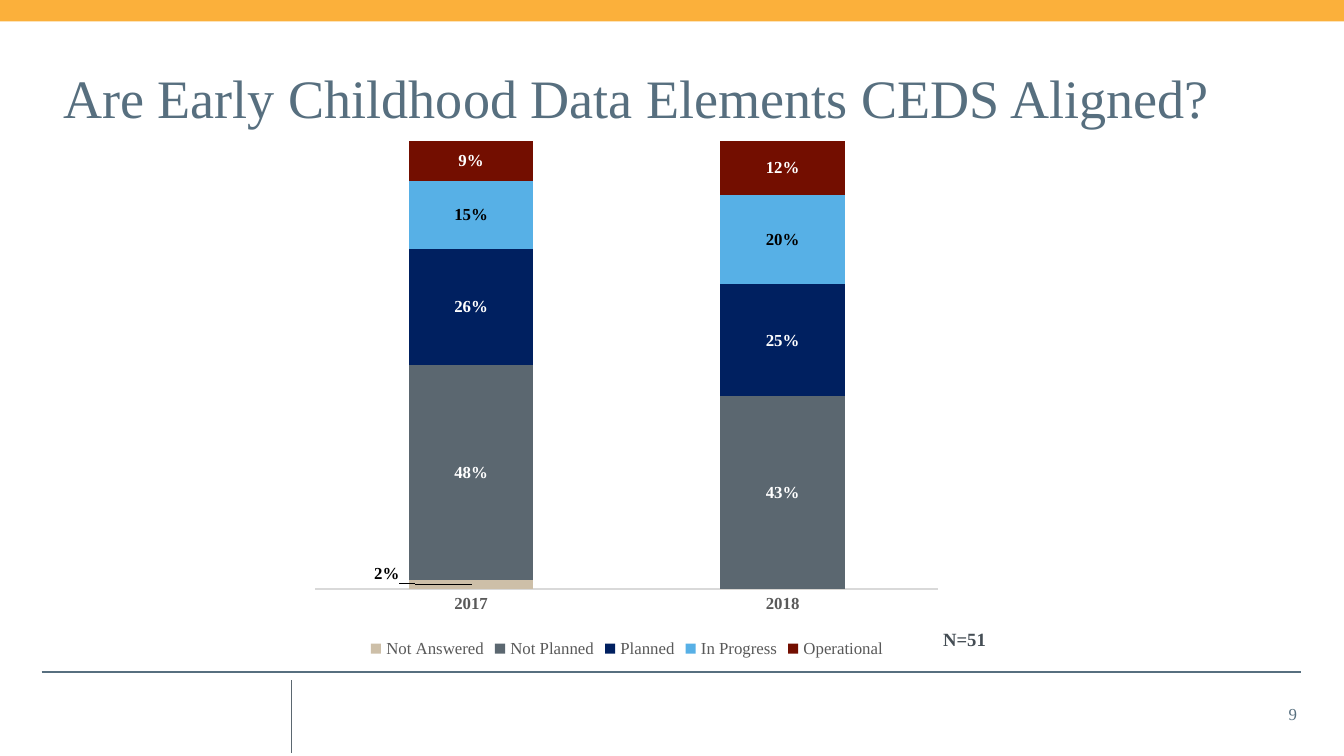
"""Build the slide on early childhood data elements and CEDS alignment."""
from lxml import etree
from pptx import Presentation
from pptx import util as u
from pptx.chart import data as cd
from pptx.dml import color as dml
from pptx.enum import chart as ch, shapes, text
from pptx.oxml import ns, parse_xml

FONT = "Times New Roman"
SLATE, GREY, AMBER = "576F7F", "5B6770", "FBB03B"
PERCENT = '0"%";;'
YEARS = ["2017", "2018"]
SERIES = [
    ("Not Answered", (2, 0), "CDBFA8", "000000"),
    ("Not Planned", (48, 43), GREY, "FFFFFF"),
    ("Planned", (26, 25), "002060", "FFFFFF"),
    ("In Progress", (15, 20), "57B0E6", "000000"),
    ("Operational", (9, 12), "730E00", "FFFFFF"),
]
RULES = [
    (0.31, 5, 9.68, 5, SLATE, 0.75),
    (2.17, 5.06, 2.17, 5.6, GREY, 0.5),
]
TEXTS = [
    ("Are Early Childhood Data Elements CEDS Aligned?", (0.47, 0.47, 9.06, 0.5),
     dict(size=29, color=SLATE, inset=(0, 0), anchor=text.MSO_ANCHOR.MIDDLE)),
    ("9", (9.3, 5.16, 0.39, 0.3),
     dict(size=9, color=SLATE, inset=(0.04, 0.02), anchor=text.MSO_ANCHOR.MIDDLE,
          align=text.PP_ALIGN.RIGHT)),
    ("N=51", (6.92, 4.62, 0.7, 0.27), dict(size=10, color="444D54", bold=True)),
]
NO_LEADERS = (
    f'<c:extLst {ns.nsdecls("c")}>'
    '<c:ext uri="{CE6537A1-D6FC-4f65-9D91-7224C49458BB}" '
    'xmlns:c15="http://schemas.microsoft.com/office/drawing/2012/chart">'
    '<c15:showLeaderLines val="0"/></c:ext></c:extLst>')


def rgb(value):
    return dml.RGBColor.from_string(value)


def style(font, size, color, bold=False):
    font.name, font.size, font.bold = FONT, u.Pt(size), bold
    font.color.rgb = rgb(color)


def add_text(s, words, box, *, size, color, bold=False, inset=(0.1, 0.05),
             anchor=text.MSO_ANCHOR.TOP, align=text.PP_ALIGN.LEFT):
    tf = s.shapes.add_textbox(*map(u.Inches, box)).text_frame
    tf.word_wrap = True
    tf.vertical_anchor = anchor
    tf.margin_left = tf.margin_right = u.Inches(inset[0])
    tf.margin_top = tf.margin_bottom = u.Inches(inset[1])
    p = tf.paragraphs[0]
    p.alignment = align
    r = p.add_run()
    r.text = words
    style(r.font, size, color, bold)


def add_rule(s, x1, y1, x2, y2, color, width):
    line = s.shapes.add_connector(shapes.MSO_CONNECTOR.STRAIGHT,
                                  *map(u.Inches, (x1, y1, x2, y2)))
    line.line.color.rgb = rgb(color)
    line.line.width = u.Pt(width)
    etree.SubElement(line._element.spPr, ns.qn("a:effectLst"))


def layout(**parts):
    tags = "".join(f'<c:{k} val="{v}"/>' for k, v in parts.items())
    return parse_xml(f'<c:layout {ns.nsdecls("c")}><c:manualLayout>{tags}'
                     '</c:manualLayout></c:layout>')


def label_series(series, color):
    labels = series.data_labels
    labels.show_value = True
    labels.number_format, labels.number_format_is_linked = PERCENT, False
    labels.position = ch.XL_LABEL_POSITION.CENTER
    style(labels.font, 9, color, True)


def move_label(series, index, dx, dy, color):
    label = series.points[index].data_label
    style(label.font, 9, color, True)
    label.position = ch.XL_LABEL_POSITION.CENTER
    node = series._element.find(".//" + ns.qn("c:dLbl"))
    fmt = etree.Element(ns.qn("c:numFmt"), formatCode=PERCENT, sourceLinked="0")
    node.insert(1, layout(x=dx, y=dy))
    node.insert(2, fmt)
    node.getparent().append(parse_xml(NO_LEADERS))


def add_stacked_chart(s, box):
    data = cd.CategoryChartData(number_format="0")
    data.categories = YEARS
    for name, values, _, _ in SERIES:
        data.add_series(name, values)
    chart = s.shapes.add_chart(ch.XL_CHART_TYPE.COLUMN_STACKED,
                               *map(u.Inches, box), data).chart
    chart.has_title = False
    chart.font.name, chart.font.size = FONT, u.Pt(10)
    chart.has_legend = True
    chart.legend.position = ch.XL_LEGEND_POSITION.BOTTOM
    chart.legend.include_in_layout = False
    style(chart.legend.font, 9, "595959")

    years, values = chart.category_axis, chart.value_axis
    years.major_tick_mark = ch.XL_TICK_MARK.NONE
    years.format.line.color.rgb = rgb("D9D9D9")
    years.format.line.width = u.Pt(0.75)
    style(years.tick_labels.font, 9, "595959", True)
    values.minimum_scale, values.maximum_scale = 0, 100
    values.has_major_gridlines = values.visible = False

    plot = chart.plots[0]
    plot.gap_width, plot.overlap, plot.vary_by_categories = 150, 100, False
    for series, (_, _, fill, label_color) in zip(plot.series, SERIES):
        series.format.fill.solid()
        series.format.fill.fore_color.rgb = rgb(fill)
        label_series(series, label_color)
    move_label(plot.series[0], 0, -0.13, -0.02, "000000")

    area = chart._chartSpace.find(".//" + ns.qn("c:plotArea"))
    for old in area.findall(ns.qn("c:layout")):
        area.remove(old)
    area.insert(0, layout(layoutTarget="inner", xMode="edge", yMode="edge",
                          x=0.02, y=0.02, w=0.96, h=0.84))


def main():
    prs = Presentation()
    prs.slide_width = u.Inches(10)
    prs.slide_height = prs.slide_width * 9 // 16
    s = prs.slides.add_slide(prs.slide_layouts[6])
    for rule in RULES:
        add_rule(s, *rule)
    band = s.shapes.add_shape(shapes.MSO_SHAPE.RECTANGLE, 0, 0,
                              prs.slide_width, u.Inches(0.16))
    band.shadow.inherit = False
    band.fill.solid()
    band.fill.fore_color.rgb = rgb(AMBER)
    band.line.fill.background()
    add_stacked_chart(s, (2.25, 0.97, 4.83, 3.97))
    for words, box, form in TEXTS:
        add_text(s, words, box, **form)
    prs.save("out.pptx")


if __name__ == "__main__":
    main()
